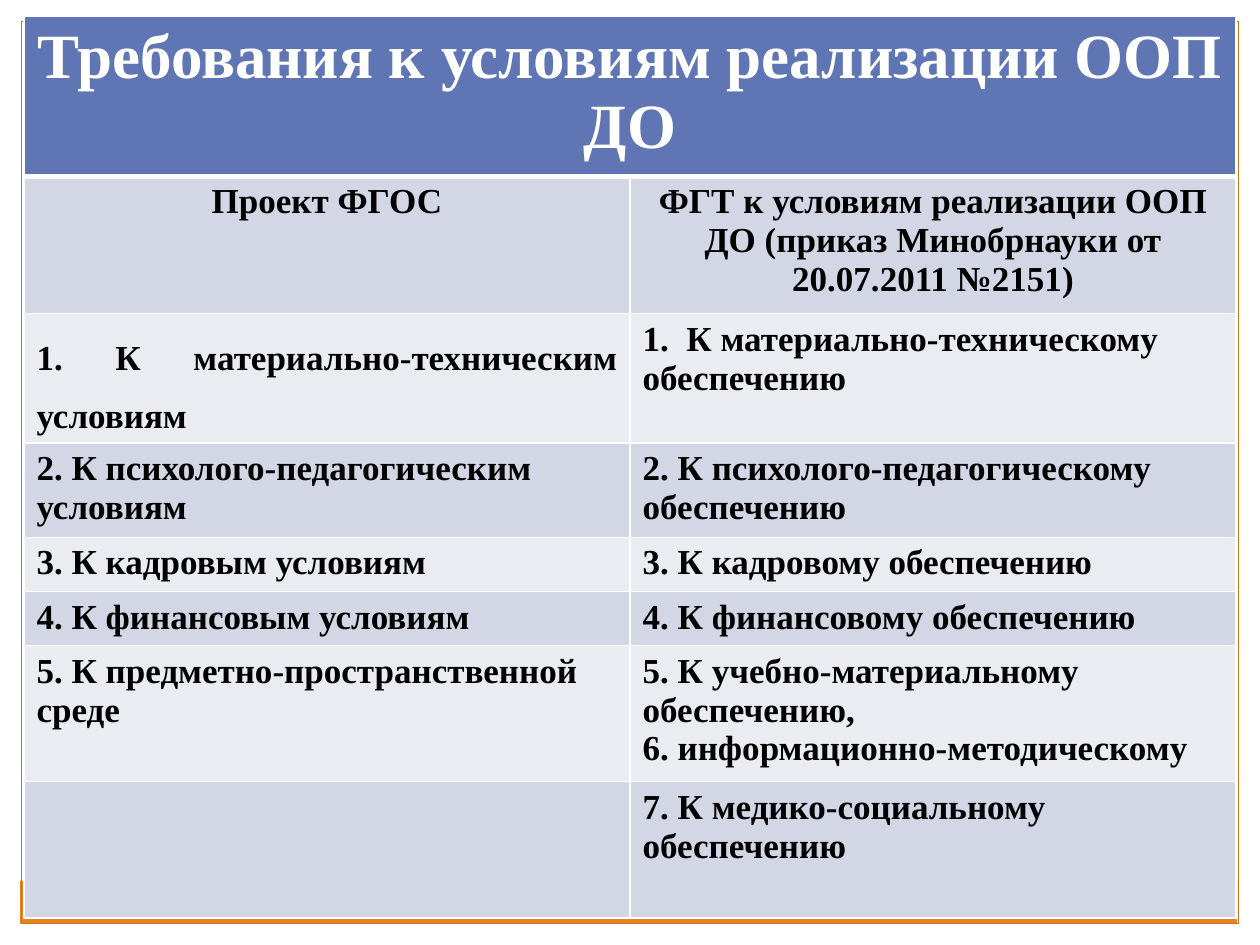
from lxml import etree
from pptx import Presentation
from pptx.dml.color import RGBColor
from pptx.enum.shapes import MSO_SHAPE
from pptx.enum.text import PP_ALIGN
from pptx.oxml.ns import qn
from pptx.util import Inches, Pt

RECTANGLE = MSO_SHAPE.RECTANGLE
LEFT, CENTER, JUSTIFY = PP_ALIGN.LEFT, PP_ALIGN.CENTER, PP_ALIGN.JUSTIFY

WHITE, BLACK = "FFFFFF", "000000"
HEADER_FILL = "6076B4"
BAND_FILLS = ("D2D6E5", "EAECF2")
ORANGE, DARK_ORANGE = "E68422", "CB741E"

PAGE_WIDTH, PAGE_HEIGHT, MARGIN = 10, 7.5, 0.17

TITLE = "Требования к условиям реализации ООП ДО"
# Row height, left text, right text
ROWS = [
    (1.09, "Проект ФГОС",
     "ФГТ к условиям реализации ООП ДО (приказ Минобрнауки от 20.07.2011 №2151)"),
    (1.02, "1. К материально-техническим условиям",
     "1.  К материально-техническому обеспечению"),
    (0.75, "2. К психолого-педагогическим условиям",
     "2. К психолого-педагогическому обеспечению"),
    (0.43, "3. К кадровым условиям", "3. К кадровому обеспечению"),
    (0.43, "4. К финансовым условиям", "4. К финансовому обеспечению"),
    (1.08, "5. К предметно-пространственной среде",
     "5. К учебно-материальному обеспечению,\n6. информационно-методическому"),
    (1.08, "", "7. К медико-социальному обеспечению"),
]
TITLE_HEIGHT = 1.27
COLUMN_WIDTH = 4.81


def color(value):
    return RGBColor.from_string(value)


def add_rectangle(page, left, top, width, height, fill=None, line=None):
    box = page.shapes.add_shape(RECTANGLE, Inches(left), Inches(top),
                                Inches(width), Inches(height))
    box.shadow.inherit = False
    if fill:
        box.fill.solid()
        box.fill.fore_color.rgb = color(fill)
    else:
        box.fill.background()
    if line:
        box.line.color.rgb = color(line)
        box.line.width = Pt(0.75)
    else:
        box.line.fill.background()


def add_frame(page):
    # White margins at the top, right and left
    add_rectangle(page, 0, 0, PAGE_WIDTH, MARGIN, fill=WHITE)
    for left in (PAGE_WIDTH - MARGIN, 0):
        add_rectangle(page, left, 0, MARGIN, PAGE_HEIGHT, fill=WHITE)
    # Bottom band and thin outline
    add_rectangle(page, 0.16, 6.99, 9.66, 0.34, fill=ORANGE)
    add_rectangle(page, MARGIN, MARGIN, PAGE_WIDTH - 2 * MARGIN,
                  PAGE_HEIGHT - 2 * MARGIN, line=DARK_ORANGE)


def set_borders(cell, bottom=1, top=1):
    """White borders; widths in points."""
    properties = cell._tc.get_or_add_tcPr()
    widths = {"a:lnL": 1, "a:lnR": 1, "a:lnT": top, "a:lnB": bottom}
    for index, (tag, width) in enumerate(widths.items()):
        line = etree.Element(qn(tag), w=str(Pt(width)))
        fill = etree.SubElement(line, qn("a:solidFill"))
        etree.SubElement(fill, qn("a:srgbClr"), val=WHITE)
        properties.insert(index, line)


def fill_cell(cell, text, fill, size=20, text_color=BLACK, align=LEFT, spacing=None):
    cell.fill.solid()
    cell.fill.fore_color.rgb = color(fill)
    cell.text = text
    font_format = {"name": "Times New Roman", "size": Pt(size), "bold": True}
    for para in cell.text_frame.paragraphs:
        para.alignment = align
        if spacing:
            para.line_spacing = spacing
        for span in para.runs:
            for name, value in font_format.items():
                setattr(span.font, name, value)
            span.font.color.rgb = color(text_color)


def add_requirements_table(page):
    heights = [TITLE_HEIGHT] + [row[0] for row in ROWS]
    table = page.shapes.add_table(len(heights), 2, Inches(0.19), Inches(0.13),
                                  Inches(2 * COLUMN_WIDTH), Inches(sum(heights))).table
    for column in table.columns:
        column.width = Inches(COLUMN_WIDTH)
    for row, height in zip(table.rows, heights):
        row.height = Inches(height)

    # Title row across both columns
    table.cell(0, 0).merge(table.cell(0, 1))
    fill_cell(table.cell(0, 0), TITLE, HEADER_FILL, 36, WHITE, CENTER)
    for cell in table.rows[0].cells:
        set_borders(cell, bottom=3)

    # Banded rows; the first one holds the column headings
    for index, (_, *texts) in enumerate(ROWS):
        for column, text in enumerate(texts):
            cell = table.cell(index + 1, column)
            layout = {"align": CENTER} if index == 0 else {}
            if (index, column) == (1, 0):
                layout = {"align": JUSTIFY, "spacing": 1.5}
            fill_cell(cell, text, BAND_FILLS[index % 2], **layout)
            set_borders(cell, top=3 if index == 0 else 1)


def main():
    deck = Presentation()
    deck.slide_width, deck.slide_height = Inches(PAGE_WIDTH), Inches(PAGE_HEIGHT)
    page = deck.slides.add_slide(deck.slide_layouts[6])
    add_frame(page)
    add_requirements_table(page)
    deck.save("out.pptx")


if __name__ == "__main__":
    main()
